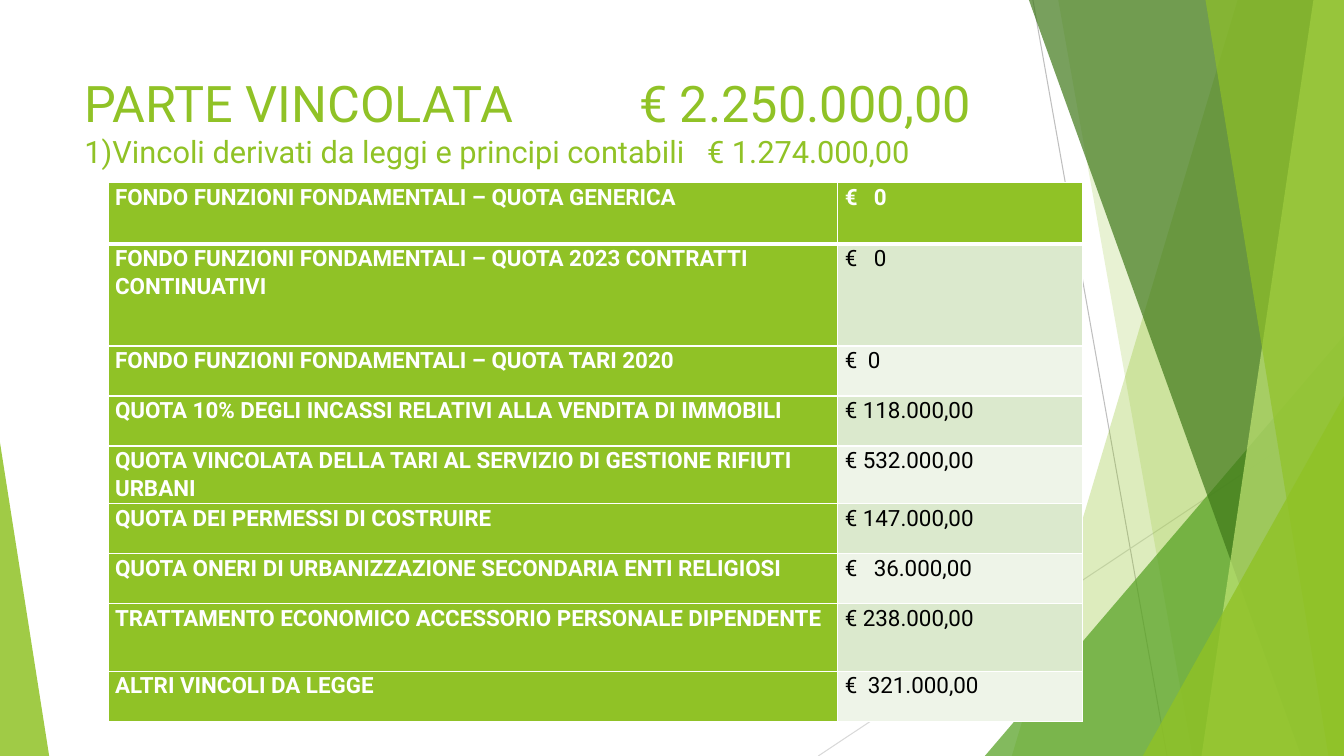
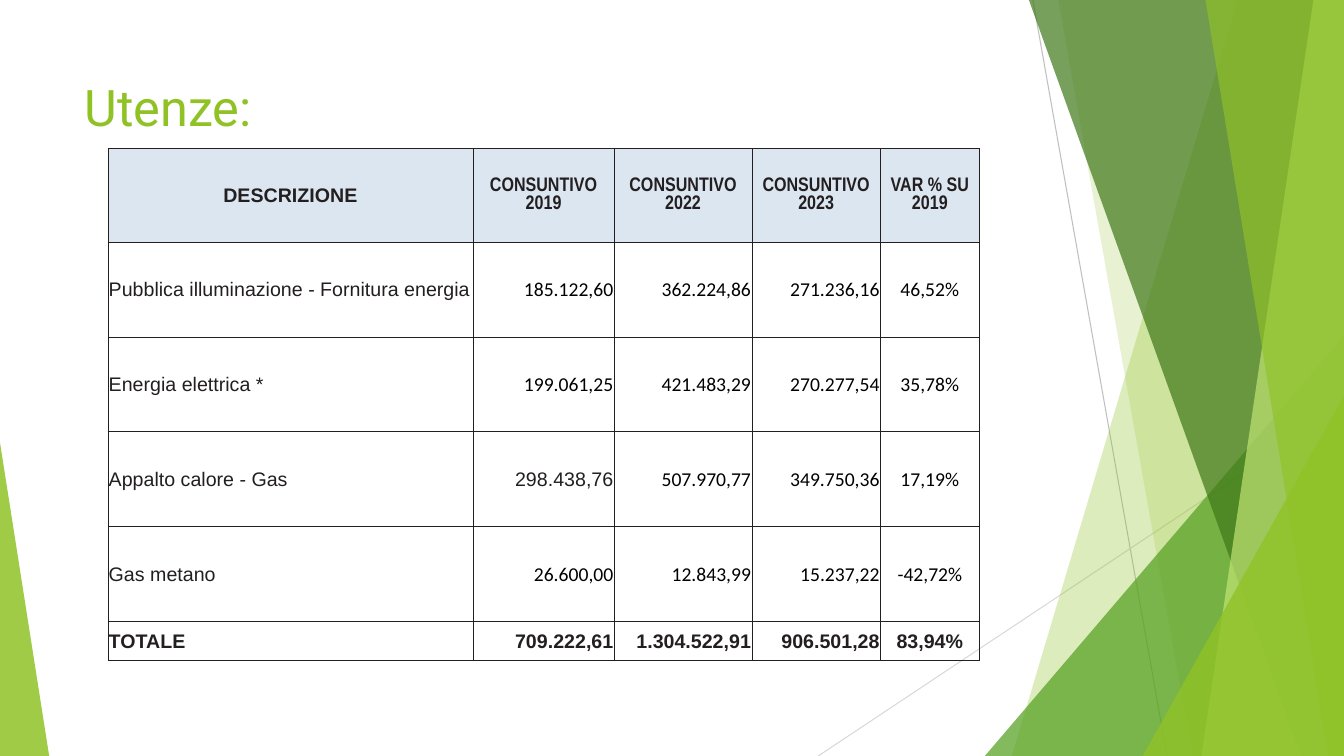
import copy
from dataclasses import dataclass

import lxml.etree
import pptx
import pptx.dml.color
import pptx.enum.shapes
import pptx.enum.text
import pptx.oxml.ns
import pptx.util

Cm, Pt, qn = pptx.util.Cm, pptx.util.Pt, pptx.oxml.ns.qn
ALIGN = pptx.enum.text.PP_ALIGN
ANCHOR = pptx.enum.text.MSO_ANCHOR

SLIDE_W, SLIDE_H = 33.87, 19.05
GREEN, WHITE, BLACK, INK = "90C226", "FFFFFF", "000000", "231F20"
HEADER_BLUE = "DCE6F1"
BANDS = ("EEF4E8", "DBE9CD")
TABLE_LEFT = 2.72


@dataclass(frozen=True)
class Ray:
    """Thin decorative line between two points."""
    start: tuple[float, float]
    end: tuple[float, float]
    color: str


@dataclass(frozen=True)
class Panel:
    """Full-height area between a slanted edge and the right slide edge."""
    top_x: float
    bottom_x: float
    color: str
    opacity: int


@dataclass(frozen=True)
class Wedge:
    """Triangle standing on the bottom slide edge."""
    left: float
    top: float
    width: float
    peak: float
    color: str
    opacity: int


@dataclass(frozen=True)
class TextStyle:
    font: str
    size: float
    color: str
    bold: bool = False


@dataclass(frozen=True)
class Fund:
    label: str
    amount: str
    height: float = 1.26
    tab: float = 0


@dataclass(frozen=True)
class Utility:
    label: str
    figures: tuple[str, str, str]
    variation: str


DECORATION = (
    Ray((26.03, 0), (29.41, SLIDE_H), "BFBFBF"),
    Ray((SLIDE_W, 10.24), (20.62, SLIDE_H), "D9D9D9"),
    Panel(31.19, 25.5, GREEN, 30),
    Panel(26.67, 30.05, GREEN, 20),
    Wedge(24.82, 8.46, 9.05, 1, "54A021", 72),
    Panel(25.93, 32.79, "3F7819", 70),
    Panel(33.1, 30.28, "C0E474", 70),
    Panel(30.38, 33.48, GREEN, 65),
    Wedge(28.8, 9.98, 5.07, 1, GREEN, 80),
    Wedge(0, 11.15, 1.24, 0, GREEN, 85),
)

FUNDS = (
    Fund("FONDO FUNZIONI FONDAMENTALI – QUOTA GENERICA", "€\t0", 1.55, 0.73),
    Fund("FONDO FUNZIONI FONDAMENTALI – QUOTA 2023 CONTRATTI CONTINUATIVI",
         "€\t0", 2.57, 0.73),
    Fund("FONDO FUNZIONI FONDAMENTALI – QUOTA TARI 2020", "€\t0", tab=0.58),
    Fund("QUOTA 10% DEGLI INCASSI RELATIVI ALLA VENDITA DI IMMOBILI", "€ 118.000,00"),
    Fund("QUOTA VINCOLATA DELLA TARI AL SERVIZIO DI GESTIONE RIFIUTI URBANI",
         "€ 532.000,00", 1.45),
    Fund("QUOTA DEI PERMESSI DI COSTRUIRE", "€ 147.000,00"),
    Fund("QUOTA ONERI DI URBANIZZAZIONE SECONDARIA ENTI RELIGIOSI",
         "€\t36.000,00", tab=0.73),
    Fund("TRATTAMENTO ECONOMICO ACCESSORIO PERSONALE DIPENDENTE", "€ 238.000,00", 1.71),
    Fund("ALTRI VINCOLI DA LEGGE", "€\t321.000,00", tab=0.58),
)

UTILITY_HEADINGS = ("DESCRIZIONE", "CONSUNTIVO\v2019", "CONSUNTIVO\v2022",
                    "CONSUNTIVO\v2023", "VAR % SU\v2019")
UTILITIES = (
    Utility("Pubblica illuminazione - Fornitura energia",
            ("185.122,60", "362.224,86", "271.236,16"), "46,52%"),
    Utility("Energia elettrica *", ("199.061,25", "421.483,29", "270.277,54"), "35,78%"),
    Utility("Appalto calore - Gas", ("298.438,76", "507.970,77", "349.750,36"), "17,19%"),
    Utility("Gas metano", ("26.600,00", "12.843,99", "15.237,22"), "-42,72%"),
    Utility("TOTALE", ("709.222,61", "1.304.522,91", "906.501,28"), "83,94%"),
)
ARIAL_FIGURES = {"298.438,76"}


def rgb(color: str) -> pptx.dml.color.RGBColor:
    return pptx.dml.color.RGBColor.from_string(color)


def paint(shape, color: str, opacity: int) -> None:
    shape.shadow.inherit = False
    shape.line.fill.background()
    shape.fill.solid()
    shape.fill.fore_color.rgb = rgb(color)
    tint = shape.element.spPr.find(".//" + qn("a:srgbClr"))
    lxml.etree.SubElement(tint, qn("a:alpha"), val=str(opacity * 1000))


def draw_ray(slide, ray: Ray) -> None:
    line = slide.shapes.add_connector(
        pptx.enum.shapes.MSO_CONNECTOR.STRAIGHT,
        *(Cm(value) for value in ray.start + ray.end))
    line.line.color.rgb = rgb(ray.color)
    line.line.width = Pt(0.75)
    lxml.etree.SubElement(line.element.spPr, qn("a:effectLst"))


def draw_panel(slide, panel: Panel) -> None:
    outline = slide.shapes.build_freeform(Cm(panel.top_x), 0)
    corners = ((SLIDE_W, 0), (SLIDE_W, SLIDE_H), (panel.bottom_x, SLIDE_H))
    outline.add_line_segments([(Cm(x), Cm(y)) for x, y in corners], close=True)
    paint(outline.convert_to_shape(), panel.color, panel.opacity)


def draw_wedge(slide, wedge: Wedge) -> None:
    triangle = slide.shapes.add_shape(
        pptx.enum.shapes.MSO_SHAPE.ISOSCELES_TRIANGLE, Cm(wedge.left), Cm(wedge.top),
        Cm(wedge.width), Cm(SLIDE_H - wedge.top))
    triangle.adjustments[0] = wedge.peak
    paint(triangle, wedge.color, wedge.opacity)


PAINTERS = {Ray: draw_ray, Panel: draw_panel, Wedge: draw_wedge}


def style_runs(paragraph, *styles: TextStyle) -> None:
    """Apply one style per run; the last one serves any further runs."""
    for index, run in enumerate(paragraph.runs):
        style = styles[min(index, len(styles) - 1)]
        run.font.name = style.font
        run.font.size = Pt(style.size)
        run.font.bold = style.bold
        run.font.color.rgb = rgb(style.color)
    for line_break in paragraph._p.findall(qn("a:br")):
        line_break.append(copy.deepcopy(paragraph.runs[0].font._element))


def set_tabs(paragraph, *stops: float) -> None:
    tabs = lxml.etree.SubElement(paragraph._p.get_or_add_pPr(), qn("a:tabLst"))
    for stop in stops:
        lxml.etree.SubElement(tabs, qn("a:tab"), pos=str(Cm(stop)), algn="l")


def add_base_slide(deck, title: str, top: float, height: float,
                   sizes: tuple[float, ...], tabs: tuple[float, ...] = ()):
    """Add a slide with the shared decoration and title style."""
    slide = deck.slides.add_slide(deck.slide_layouts[6])
    for item in DECORATION:
        PAINTERS[type(item)](slide, item)
    frame = slide.shapes.add_textbox(Cm(1.88), Cm(top), Cm(23.88), Cm(height)).text_frame
    frame.word_wrap = True
    frame.margin_top = Cm(0.22)
    heading = frame.paragraphs[0]
    heading.text = title
    style_runs(heading, *(TextStyle("Roboto", size, GREEN) for size in sizes))
    if tabs:
        set_tabs(heading, *tabs)
    return slide


def add_plain_table(slide, top: float, widths: list[float], heights: list[float]):
    table = slide.shapes.add_table(
        len(heights), len(widths), Cm(TABLE_LEFT), Cm(top),
        Cm(sum(widths)), Cm(sum(heights))).table
    table.first_row = table.horz_banding = False
    for column, width in zip(table.columns, widths):
        column.width = Cm(width)
    for row, height in zip(table.rows, heights):
        row.height = Cm(height)
    return table


def fill_cell(cell, text: str, style: TextStyle, fill: str | None,
              margins: tuple[float, float, float, float]):
    """Set text, background and margins (left, top, right, bottom)."""
    (cell.margin_left, cell.margin_top,
     cell.margin_right, cell.margin_bottom) = map(Cm, margins)
    if fill:
        cell.fill.solid()
        cell.fill.fore_color.rgb = rgb(fill)
    else:
        cell.fill.background()
    paragraph = cell.text_frame.paragraphs[0]
    paragraph.text = text
    style_runs(paragraph, style)
    return paragraph


def set_borders(cell, color: str, width: float, **special: float) -> None:
    """Draw all four sides; special gives other widths by side letter."""
    properties = cell._tc.get_or_add_tcPr()
    for index, side in enumerate("LRTB"):
        line = lxml.etree.Element(
            qn("a:ln" + side), w=str(Pt(special.get(side, width))))
        solid = lxml.etree.SubElement(line, qn("a:solidFill"))
        lxml.etree.SubElement(solid, qn("a:srgbClr"), val=color)
        properties.insert(index, line)


def build_funds_slide(deck) -> None:
    slide = add_base_slide(
        deck,
        "PARTE VINCOLATA\t€ 2.250.000,00\v"
        "1)Vincoli derivati da leggi e principi contabili\t€ 1.274.000,00",
        1.6, 3, (36, 22), (13.98, 15.69))
    table = add_plain_table(slide, 4.6, [18.39, 6.17], [fund.height for fund in FUNDS])
    strong = TextStyle("Roboto", 16, WHITE, True)
    plain = TextStyle("Roboto", 16, BLACK)
    edges = {0: {"B": 3}, 1: {"T": 3}}
    for row, fund in enumerate(FUNDS):
        for column, text in enumerate((fund.label, fund.amount)):
            emphasized = row == 0 or column == 0
            cell = table.cell(row, column)
            paragraph = fill_cell(cell, text, strong if emphasized else plain,
                                  GREEN if emphasized else BANDS[row % 2],
                                  (0.18, 0, 0.18, 0))
            paragraph.line_spacing = 1.07
            paragraph.space_after = Pt(8)
            if "\t" in text:
                set_tabs(paragraph, fund.tab)
            set_borders(cell, WHITE, 1, **edges.get(row, {}))


def utility_style(row: int, column: int, text: str) -> TextStyle:
    if row == 0:
        return TextStyle("Arial Narrow" if column else "Arial", 14, INK, True)
    total = row == len(UTILITIES)
    if total or column == 0 or text in ARIAL_FIGURES:
        return TextStyle("Arial", 14, INK, total)
    return TextStyle("Calibri", 14, BLACK)


def build_utilities_slide(deck) -> None:
    slide = add_base_slide(deck, "Utenze:", 1.7, 2.06, (36,))
    rows = [UTILITY_HEADINGS] + [
        (item.label, *item.figures, item.variation) for item in UTILITIES]
    table = add_plain_table(slide, 3.74, [9.2, 3.56, 3.47, 3.24, 2.49],
                            [2.36] + [2.39] * 4 + [0.99])
    alignments = (ALIGN.LEFT, ALIGN.RIGHT, ALIGN.RIGHT, ALIGN.RIGHT, ALIGN.CENTER)
    for row, texts in enumerate(rows):
        for column, text in enumerate(texts):
            cell = table.cell(row, column)
            paragraph = fill_cell(cell, text, utility_style(row, column, text),
                                  None if row else HEADER_BLUE, (0.02, 0.02, 0.02, 0))
            paragraph.alignment = alignments[column] if row else ALIGN.CENTER
            cell.vertical_anchor = ANCHOR.MIDDLE
            set_borders(cell, INK, 0.5)


def main() -> None:
    deck = pptx.Presentation()
    deck.slide_width, deck.slide_height = Cm(SLIDE_W), Cm(SLIDE_H)
    build_funds_slide(deck)
    build_utilities_slide(deck)
    deck.save("out.pptx")


if __name__ == "__main__":
    main()
